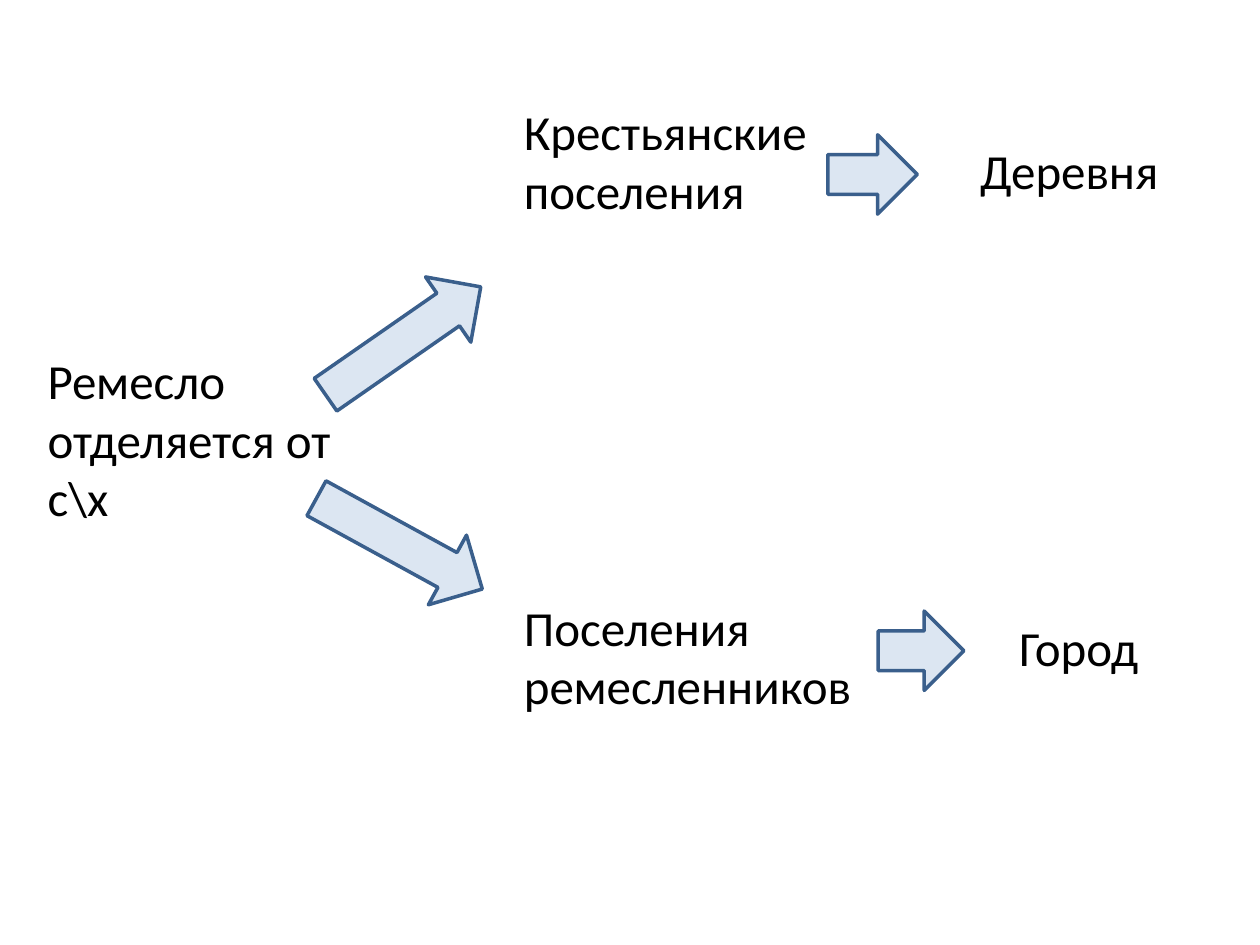
from pptx import Presentation
from pptx.dml.color import RGBColor
from pptx.enum.shapes import MSO_SHAPE
from pptx.enum.text import MSO_ANCHOR, MSO_AUTO_SIZE, PP_ALIGN
from pptx.util import Inches, Pt

WHITE = RGBColor(0xFF, 0xFF, 0xFF)
BLACK = RGBColor(0, 0, 0)
PALE_BLUE = RGBColor(0xDC, 0xE6, 0xF2)
DARK_BLUE = RGBColor(0x3A, 0x5F, 0x8C)

ARROW_HEIGHT = 0.63
SPLIT_LENGTH = 1.5
SETTLEMENT_LEFT = 4.06
SETTLEMENT_HEIGHT, RESULT_HEIGHT = 1.04, 0.57

CAUSE = ("Ремесло отделяется от с\\х", (0.28, 2.73, 2.83, 1.51))

# Each branch: split arrow (left, top, rotation), settlement (text, top, width),
# result arrow (left, width), result (text, left, width), top of the result row
BRANCHES = [
    dict(split=(2.45, 2.39, 325.2), settlement=("Крестьянские поселения", 0.76, 2.76),
         arrow=(6.57, 0.71), result=("Деревня", 7.68, 1.97), result_top=1.07),
    dict(split=(2.42, 4.0, 28.7), settlement=("Поселения ремесленников", 4.69, 3.07),
         arrow=(6.97, 0.68), result=("Город", 7.99, 1.81), result_top=4.85),
]


def add_label(slide, text, box, fill=None, size=28, color=BLACK, font="Calibri"):
    place = [Inches(length) for length in box]
    if fill is None:
        label = slide.shapes.add_textbox(*place)
    else:
        label = slide.shapes.add_shape(MSO_SHAPE.RECTANGLE, *place)
        label.shadow.inherit = False
        label.fill.solid()
        label.fill.fore_color.rgb = fill
        label.line.fill.background()
    frame = label.text_frame
    frame.word_wrap = True
    frame.auto_size = MSO_AUTO_SIZE.SHAPE_TO_FIT_TEXT
    frame.vertical_anchor = MSO_ANCHOR.TOP
    paragraph = frame.paragraphs[0]
    paragraph.alignment = PP_ALIGN.LEFT
    run = paragraph.add_run()
    run.text = text
    run.font.size = Pt(size)
    run.font.name = font
    run.font.color.rgb = color


def add_arrow(slide, left, top, length, rotation=0):
    arrow = slide.shapes.add_shape(MSO_SHAPE.RIGHT_ARROW, Inches(left), Inches(top),
                                   Inches(length), Inches(ARROW_HEIGHT))
    arrow.rotation = rotation
    arrow.shadow.inherit = False
    arrow.fill.solid()
    arrow.fill.fore_color.rgb = PALE_BLUE
    arrow.line.color.rgb = DARK_BLUE
    arrow.line.width = Pt(2)


def main():
    deck = Presentation()
    deck.slide_width, deck.slide_height = Inches(10), Inches(7.5)
    slide = deck.slides.add_slide(deck.slide_layouts[6])

    cause_text, cause_box = CAUSE
    add_label(slide, cause_text, cause_box, fill=WHITE)
    for branch in BRANCHES:
        left, top, rotation = branch["split"]
        add_arrow(slide, left, top, SPLIT_LENGTH, rotation)

    for branch in BRANCHES:
        text, top, width = branch["settlement"]
        add_label(slide, text, (SETTLEMENT_LEFT, top, width, SETTLEMENT_HEIGHT))
    for branch in BRANCHES:
        result_top = branch["result_top"]
        left, length = branch["arrow"]
        add_arrow(slide, left, result_top, length)
        text, left, width = branch["result"]
        add_label(slide, text, (left, result_top, width, RESULT_HEIGHT))

    deck.save("out.pptx")


if __name__ == "__main__":
    main()
